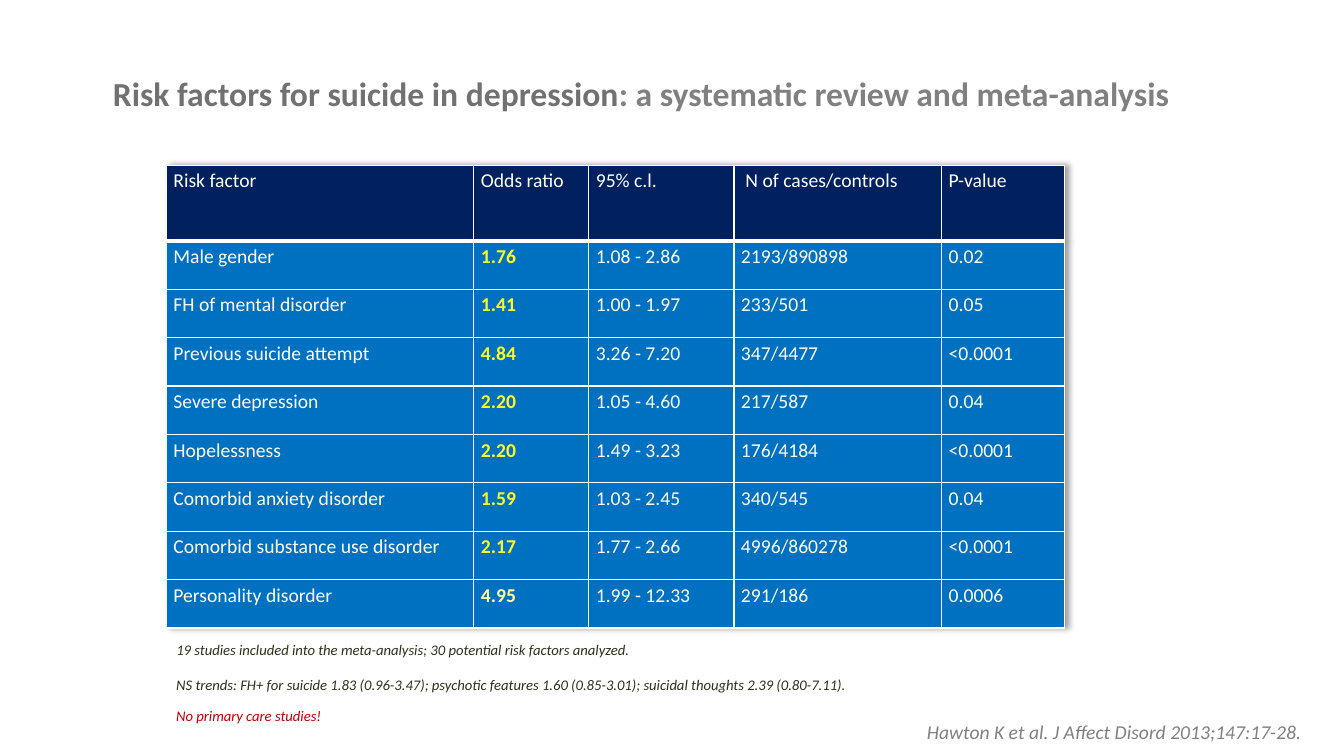
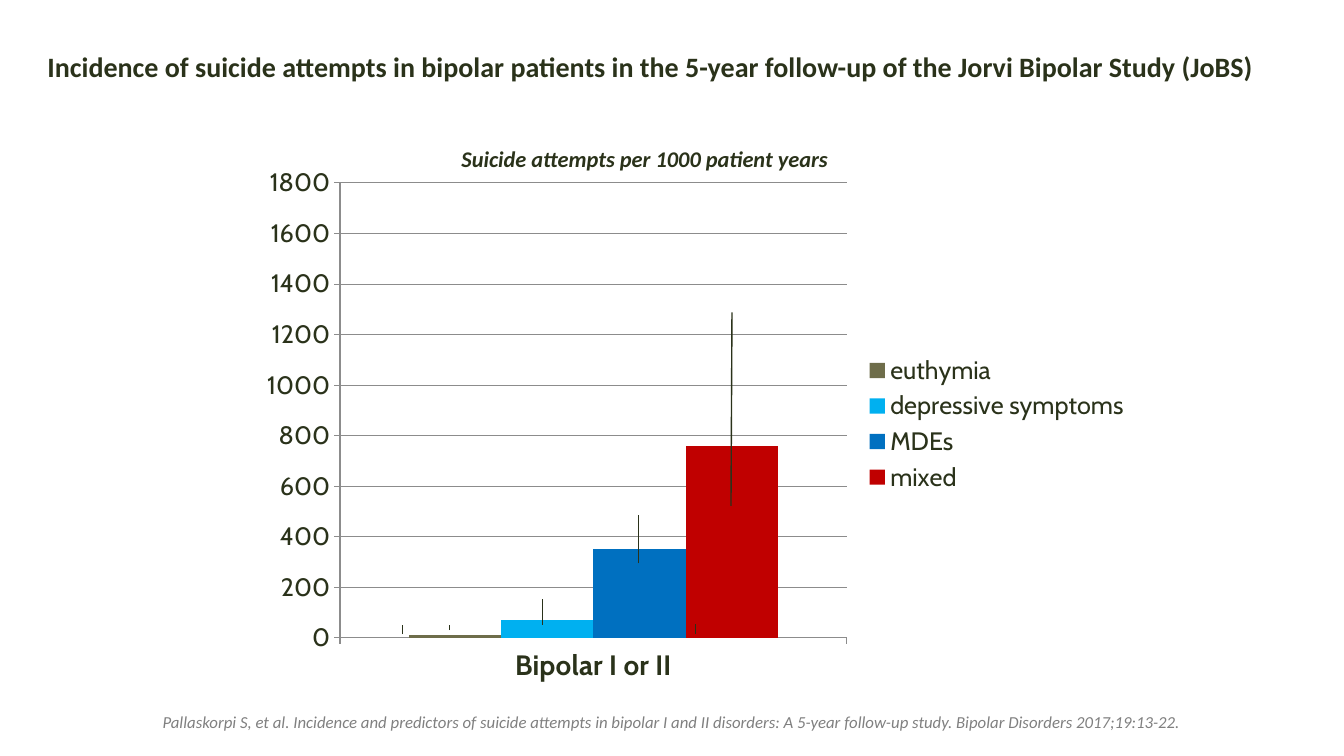
from lxml import etree
from pptx import Presentation
from pptx import util as u
from pptx.chart import data as chart_data
from pptx.dml.color import RGBColor
from pptx.enum import chart as charts, shapes, text
from pptx.oxml import parse_xml
from pptx.oxml.ns import nsdecls, qn

WHITE = RGBColor(0xFF, 0xFF, 0xFF)
INK = RGBColor(0x2A, 0x32, 0x1A)
GRAY = RGBColor(0x80, 0x80, 0x80)
DARK_GRAY = RGBColor(0x71, 0x71, 0x71)
GRID = RGBColor(0x8C, 0x8C, 0x8C)
NAVY = RGBColor(0x00, 0x20, 0x60)
BLUE = RGBColor(0x00, 0x70, 0xC0)
SKY = RGBColor(0x00, 0xB0, 0xF0)
OLIVE = RGBColor(0x6E, 0x6D, 0x4A)
RED = RGBColor(0xC0, 0x00, 0x00)
YELLOW = RGBColor(0xFF, 0xFA, 0x23)
PALE_YELLOW = RGBColor(0xFF, 0xFF, 0x9E)

LEFT = text.PP_ALIGN.LEFT
CENTER = text.PP_ALIGN.CENTER
RIGHT = text.PP_ALIGN.RIGHT


class Deck:
    body_font = "Calibri"
    chart_font = "Cabin"

    def __init__(self):
        self.presentation = Presentation()
        self.presentation.slide_width = u.Inches(13.33)
        self.presentation.slide_height = u.Inches(7.5)
        self.slide = None

    def style(self, font, size, color, bold=False, italic=False, name=body_font):
        font.name = name
        font.size = u.Pt(size)
        font.color.rgb = color
        font.bold = bold
        font.italic = italic

    def add_run(self, paragraph, words, size, color, **emphasis):
        run = paragraph.add_run()
        run.text = words
        self.style(run.font, size, color, **emphasis)

    def start_slide(self, runs, box, size):
        self.slide = self.presentation.slides.add_slide(self.presentation.slide_layouts[5])
        title = self.slide.shapes.title
        title.left, title.top, title.width, title.height = map(u.Inches, box)
        frame = title.text_frame
        frame.auto_size = text.MSO_AUTO_SIZE.NONE
        frame.vertical_anchor = text.MSO_ANCHOR.TOP
        paragraph = frame.paragraphs[0]
        paragraph.alignment = LEFT
        for words, color in runs:
            self.add_run(paragraph, words, size, color, bold=True)

    def add_text(self, lines, box, size, align=LEFT, bold=False, space_after=0):
        frame = self.slide.shapes.add_textbox(*map(u.Inches, box)).text_frame
        frame.word_wrap = True
        for index, (words, color) in enumerate(lines):
            paragraph = frame.add_paragraph() if index else frame.paragraphs[0]
            paragraph.alignment = align
            paragraph.space_after = u.Pt(space_after)
            self.add_run(paragraph, words, size, color, bold=bold, italic=True)

    def add_line(self, x, bottom, top, width, drift=0):
        line = self.slide.shapes.add_connector(
            shapes.MSO_CONNECTOR.STRAIGHT,
            *map(u.Inches, (x, bottom, x + drift, top)))
        line.line.color.rgb = INK
        line.line.width = u.Pt(width)
        etree.SubElement(line._element.spPr, qn("a:effectLst"))

    def set_borders(self, cell, top, bottom):
        properties = cell._tc.get_or_add_tcPr()
        for index, (side, width) in enumerate((("L", 1), ("R", 1), ("T", top), ("B", bottom))):
            properties.insert(index, parse_xml(
                f'<a:ln{side} {nsdecls("a")} w="{u.Pt(width)}"><a:solidFill>'
                f'<a:srgbClr val="{WHITE}"/></a:solidFill></a:ln{side}>'))

    def add_table(self, rows, position, widths, heights, highlights):
        frame = self.slide.shapes.add_table(
            len(rows), len(widths),
            *map(u.Inches, (*position, sum(widths), sum(heights))))
        table = frame.table
        table._tbl.tblPr.insert(0, parse_xml(
            f'<a:effectLst {nsdecls("a")}><a:outerShdw blurRad="50800" dist="38100" '
            'algn="l" rotWithShape="0"><a:srgbClr val="000000"><a:alpha val="40000"/>'
            '</a:srgbClr></a:outerShdw></a:effectLst>'))
        for column, width in zip(table.columns, widths):
            column.width = u.Inches(width)
        for row_index, values in enumerate(rows):
            table.rows[row_index].height = u.Inches(heights[row_index])
            for column_index, words in enumerate(values):
                cell = table.cell(row_index, column_index)
                cell.margin_left = cell.margin_right = u.Inches(0.07)
                cell.margin_top = cell.margin_bottom = u.Inches(0.04)
                cell.fill.solid()
                cell.fill.fore_color.rgb = BLUE if row_index else NAVY
                self.set_borders(cell, 3 if row_index == 1 else 1, 1 if row_index else 3)
                highlighted = row_index > 0 and column_index == 1
                color = highlights[row_index - 1] if highlighted else WHITE
                self.add_run(cell.text_frame.paragraphs[0], words, 14, color, bold=highlighted)

    def place_plot(self, chart, x, y, width, height):
        plot_area = chart._chartSpace.chart.plotArea
        for layout in plot_area.findall(qn("c:layout")):
            plot_area.remove(layout)
        plot_area.insert(0, parse_xml(
            f'<c:layout {nsdecls("c")}><c:manualLayout><c:layoutTarget val="inner"/>'
            '<c:xMode val="edge"/><c:yMode val="edge"/>'
            f'<c:x val="{x}"/><c:y val="{y}"/><c:w val="{width}"/><c:h val="{height}"/>'
            '</c:manualLayout></c:layout>'))

    def add_column_chart(self, category, series, box, maximum, step):
        content = chart_data.CategoryChartData(number_format="General")
        content.categories = [category]
        for name, value, _ in series:
            content.add_series(name, [value])
        chart = self.slide.shapes.add_chart(
            charts.XL_CHART_TYPE.COLUMN_CLUSTERED, *map(u.Inches, box), content).chart
        chart.has_title = False
        self.style(chart.font, 18, INK, name="Arial")
        plot = chart.plots[0]
        plot.gap_width = 150
        plot.overlap = 0
        plot.vary_by_categories = False
        for bars, (_, _, color) in zip(plot.series, series):
            bars.format.fill.solid()
            bars.format.fill.fore_color.rgb = color
        values, categories = chart.value_axis, chart.category_axis
        values.minimum_scale = 0
        values.maximum_scale = maximum
        values.major_unit = step
        values.has_major_gridlines = True
        for line in (values.major_gridlines.format.line, values.format.line, categories.format.line):
            line.color.rgb = GRID
            line.width = u.Pt(0.75)
        for axis in (values, categories):
            axis.major_tick_mark = charts.XL_TICK_MARK.OUTSIDE
        self.style(values.tick_labels.font, 18, INK, name=self.chart_font)
        self.style(categories.tick_labels.font, 20, INK, bold=True, name=self.chart_font)
        chart.has_legend = True
        chart.legend.position = charts.XL_LEGEND_POSITION.RIGHT
        chart.legend.include_in_layout = False
        self.style(chart.legend.font, 18, INK, name=self.chart_font)
        self.place_plot(chart, 0.1, 0.05, 0.57, 0.85)


RISK_FACTORS = [
    ("Risk factor", "Odds ratio", "95% c.l.", " N of cases/controls", "P-value"),
    ("Male gender", "1.76", "1.08 - 2.86", "2193/890898", "0.02"),
    ("FH of mental disorder", "1.41", "1.00 - 1.97", "233/501", "0.05"),
    ("Previous suicide attempt", "4.84", "3.26 - 7.20", "347/4477", "<0.0001"),
    ("Severe depression", "2.20", "1.05 - 4.60", "217/587", "0.04"),
    ("Hopelessness", "2.20", "1.49 - 3.23", "176/4184", "<0.0001"),
    ("Comorbid anxiety disorder", "1.59", "1.03 - 2.45", "340/545", "0.04"),
    ("Comorbid substance use disorder", "2.17", "1.77 - 2.66", "4996/860278", "<0.0001"),
    ("Personality disorder", "4.95", "1.99 - 12.33", "291/186", "0.0006"),
]

ATTEMPTS = [
    ("euthymia", 10, OLIVE),
    ("depressive symptoms", 70, SKY),
    ("MDEs", 350, BLUE),
    ("mixed", 760, RED),
]

ERROR_LINES = [
    (7.25, 5.02, 3.1, 1, 0.01),
    (6.33, 5.59, 5.11, 1),
    (5.38, 6.2, 5.94, 1),
    (3.99, 6.29, 6.2, 0.75),
    (6.9, 6.29, 6.19, 0.75),
    (4.46, 6.25, 6.2, 1),
]


def build_risk_factors(deck):
    deck.start_slide([("Risk factors for suicide in depression", DARK_GRAY),
                      (": a systematic review and meta-analysis", GRAY)],
                     (1.02, 0.67, 11.99, 0.5), 24)
    deck.add_table(RISK_FACTORS, (1.65, 1.64), (3.05, 1.14, 1.44, 2.06, 1.22),
                   [0.75] + [0.48] * 8, [YELLOW] * 7 + [PALE_YELLOW])
    deck.add_text([("Hawton K et al. J Affect Disord 2013;147:17-28.", GRAY)],
                  (7.86, 7.09, 5.15, 0.34), 14, RIGHT)
    deck.add_text([("19 studies included into the meta-analysis; 30 potential risk factors analyzed.", INK)],
                  (1.65, 6.31, 6.85, 0.28), 10.5)
    deck.add_text([("NS trends: FH+ for suicide 1.83 (0.96-3.47); psychotic features 1.60 (0.85-3.01); "
                    "suicidal thoughts 2.39 (0.80-7.11).", INK),
                   ("No primary care studies!", RED)],
                  (1.65, 6.66, 8.2, 0.58), 10.5, space_after=9)


def build_incidence(deck):
    deck.start_slide([("Incidence of suicide attempts in bipolar patients in the 5-year follow-up "
                       "of the Jorvi Bipolar Study (JoBS)", INK)],
                     (0.37, 0.44, 12.6, 0.44), 20)
    deck.add_column_chart("Bipolar I or II", ATTEMPTS, (2.49, 1.55, 8.82, 5.31), 1800, 200)
    for error_line in ERROR_LINES:
        deck.add_line(*error_line)
    deck.add_text([("Suicide attempts per 1000 patient years", INK)],
                  (3.52, 1.39, 5.75, 0.37), 16, CENTER, bold=True)
    deck.add_text([("Pallaskorpi S, et al. Incidence and predictors of suicide attempts in bipolar I and II "
                    "disorders: A 5-year follow-up study. Bipolar Disorders 2017;19:13-22.", GRAY)],
                  (0, 7.01, 13.33, 0.3), 12, CENTER)


def main():
    deck = Deck()
    build_risk_factors(deck)
    build_incidence(deck)
    deck.presentation.save("out.pptx")


if __name__ == "__main__":
    main()
